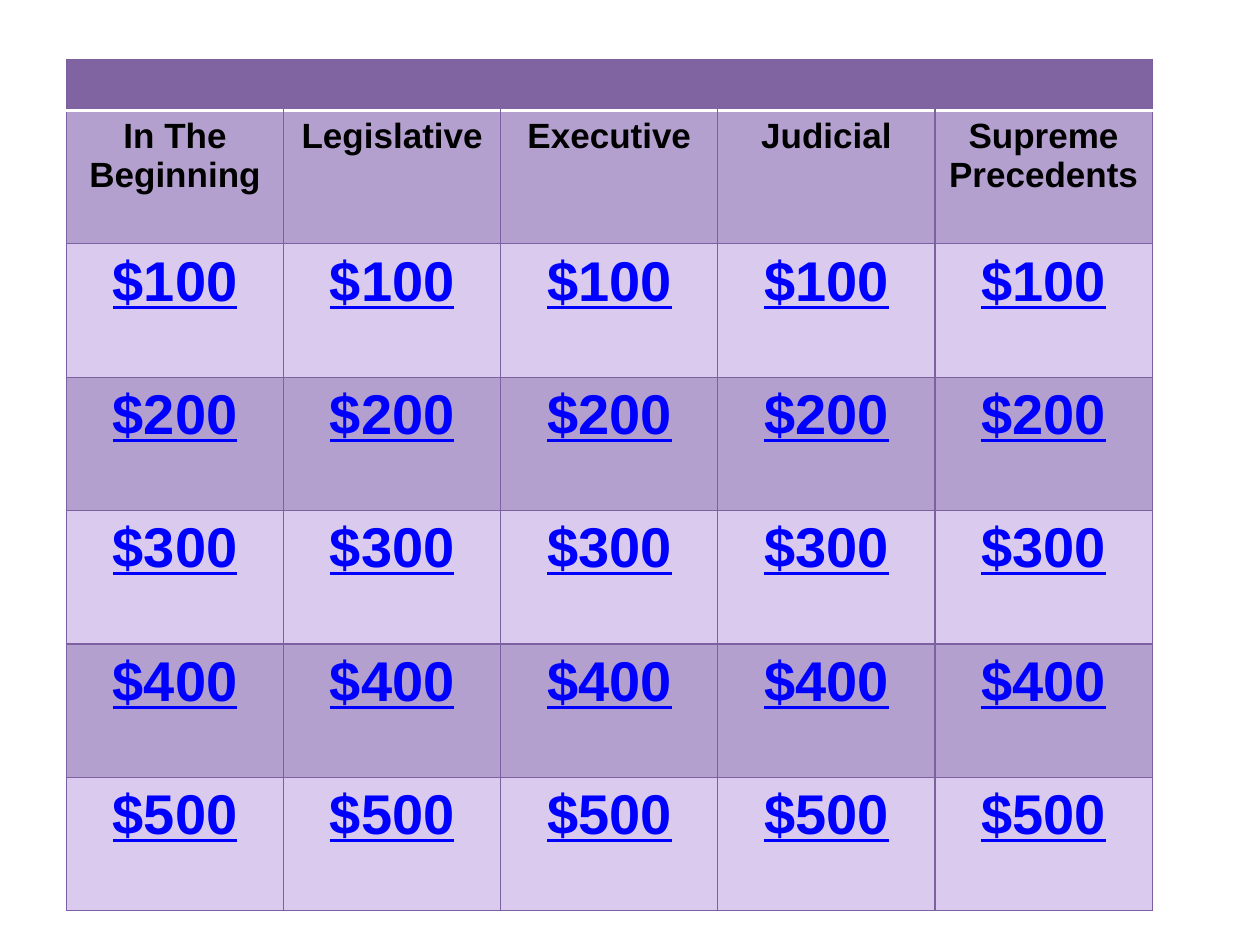
from lxml import etree
from pptx import Presentation
from pptx.dml.color import RGBColor
from pptx.enum.text import PP_ALIGN
from pptx.oxml.ns import qn
from pptx.util import Pt

CENTER = PP_ALIGN.CENTER
COLORS = {
    "header": "8064A2",
    "dark_band": "B4A0CF",
    "light_band": "DACAEE",
    "grid": "7D60A0",
    "header_rule": "FFFFFF",
    "category": "000000",
    "amount": "0000FF",
}
NO_STYLE = "{2D5ABB26-0587-4C30-8999-92F81FD0307C}"
CATEGORIES = ["In The\nBeginning", "Legislative", "Executive", "Judicial",
              "Supreme\nPrecedents"]
AMOUNTS = ["$100", "$200", "$300", "$400", "$500"]
COLUMN_WIDTH, HEADER_HEIGHT, ROW_HEIGHT = 124.1, 29.2, 76.2


def write_text(frame, text, size, color, underline=False):
    frame.text = text
    for paragraph in frame.paragraphs:
        paragraph.alignment = CENTER
        for run in paragraph.runs:
            run.font.name = "Arial"
            run.font.size = Pt(size)
            run.font.bold = True
            run.font.underline = underline
            run.font.color.rgb = RGBColor.from_string(COLORS[color])


def add_border(cell, side, color, width):
    line = etree.SubElement(cell._tc.get_or_add_tcPr(), qn(f"a:ln{side}"),
                            w=str(Pt(width)))
    fill = etree.SubElement(line, qn("a:solidFill"))
    etree.SubElement(fill, qn("a:srgbClr"), val=COLORS[color])


prs = Presentation()
prs.slide_width, prs.slide_height = Pt(720), Pt(540)
slide = prs.slides.add_slide(prs.slide_layouts[6])

# Game board: empty header, categories, then one row per amount
contents = [None, CATEGORIES] + [[amount] * len(CATEGORIES) for amount in AMOUNTS]
row_count, column_count = len(contents), len(CATEGORIES)
board = slide.shapes.add_table(
    row_count, column_count, Pt(38), Pt(34), Pt(COLUMN_WIDTH * column_count),
    Pt(HEADER_HEIGHT + ROW_HEIGHT * (row_count - 1))).table
board._tbl.tblPr.find(qn("a:tableStyleId")).text = NO_STYLE
for column in board.columns:
    column.width = Pt(COLUMN_WIDTH)

for r, row_texts in enumerate(contents):
    board.rows[r].height = Pt(ROW_HEIGHT if r else HEADER_HEIGHT)
    for c in range(column_count):
        cell = board.cell(r, c)

        # Grid lines: the header has no inner verticals and a white rule below
        if r or c == 0:
            add_border(cell, "L", "grid", 0.75)
        if r or c == column_count - 1:
            add_border(cell, "R", "grid", 0.75)
        if r == 1:
            add_border(cell, "T", "header_rule", 2)
        else:
            add_border(cell, "T", "grid", 0.75)
        if r == 0:
            add_border(cell, "B", "header_rule", 2)
        else:
            add_border(cell, "B", "grid", 0.75)

        # Alternating bands below the header
        band = "header" if r == 0 else "dark_band" if r % 2 else "light_band"
        cell.fill.solid()
        cell.fill.fore_color.rgb = RGBColor.from_string(COLORS[band])

        if r == 1:
            write_text(cell.text_frame, row_texts[c], size=20, color="category")
        elif r > 1:
            write_text(cell.text_frame, row_texts[c], size=32, color="amount",
                       underline=True)

prs.save("out.pptx")
